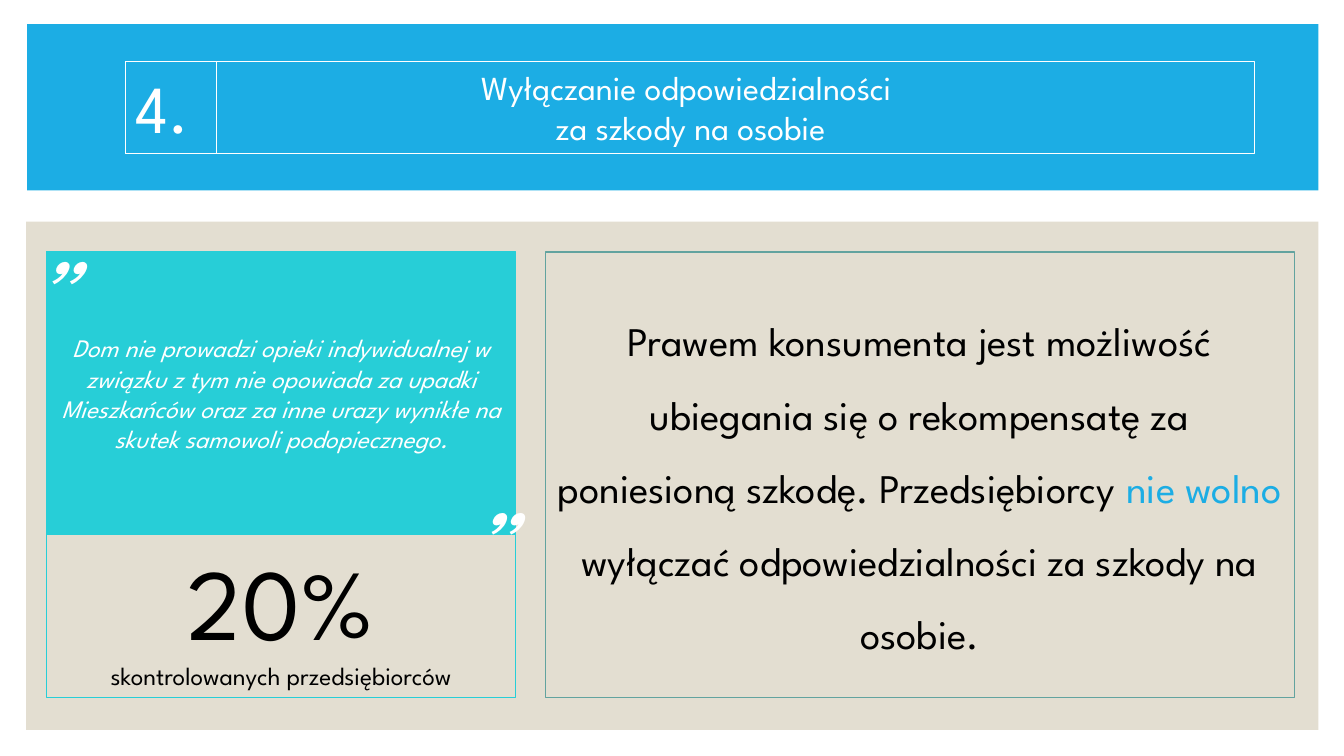
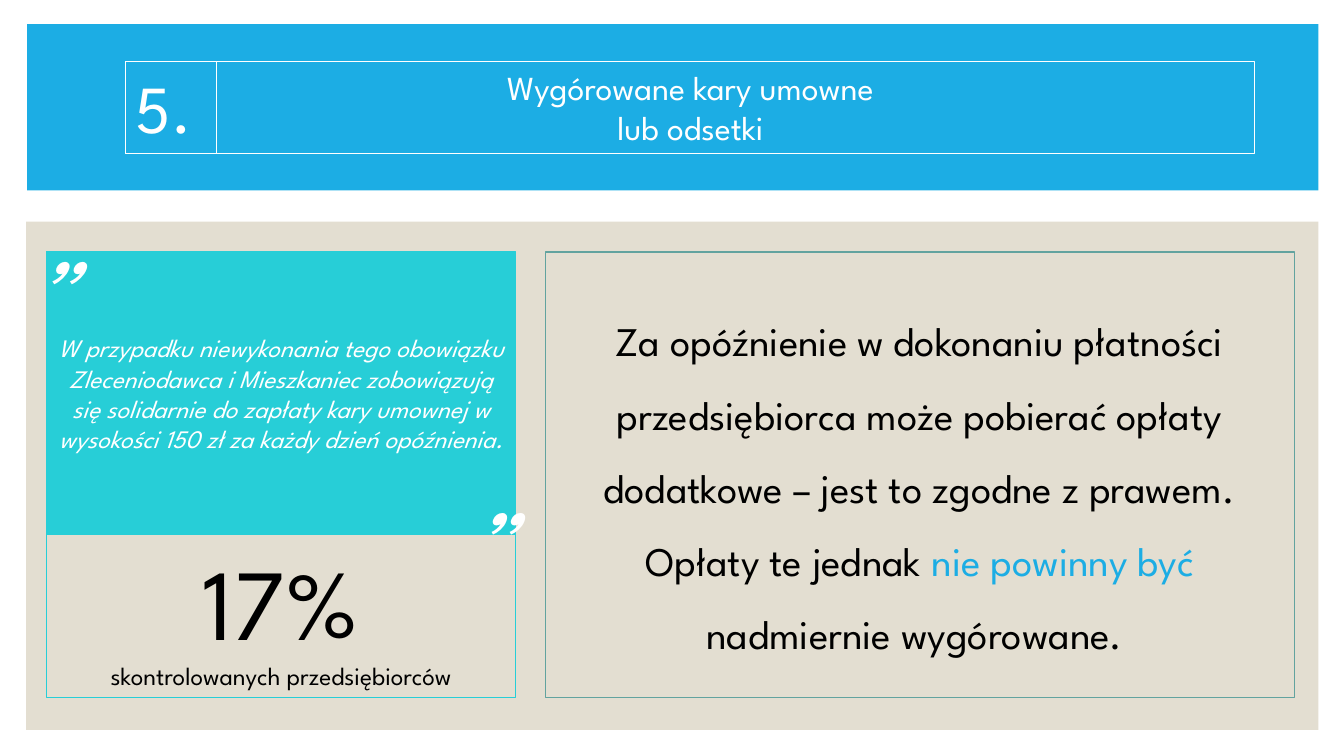
"""Build two slides on unfair contract terms in care homes."""
from pptx import Presentation
from pptx.dml.color import RGBColor
from pptx.enum.shapes import MSO_SHAPE
from pptx.enum.text import MSO_ANCHOR, MSO_AUTO_SIZE, PP_ALIGN
from pptx.util import Pt

FONT = "League Spartan"
COLORS = {
    "white": "FFFFFF",
    "black": "000000",
    "blue": "1CADE4",
    "turquoise": "27CED7",
    "green": "62A39F",
    "beige": "E3DED1",
}
TITLE_TOP, TITLE_HEIGHT = 43.9, 65.5
CARD_LEFT, CARD_TOP, CARD_WIDTH = 33.1, 180, 335.5
QUOTE_HEIGHT, STAT_HEIGHT = 201.6, 116.6

TOPICS = [
    {
        "number": "4.",
        "title": ["Wyłączanie odpowiedzialności ", "za szkody na osobie"],
        "quote": "Dom nie prowadzi opieki indywidualnej w związku z tym nie opowiada "
                 "za upadki Mieszkańców oraz za inne urazy wynikłe na skutek samowoli "
                 "podopiecznego.",
        "share": "20%",
        "rule": [
            ("Prawem konsumenta jest możliwość ubiegania się o rekompensatę za "
             "poniesioną szkodę. Przedsiębiorcy ", "black"),
            ("nie wolno ", "blue"),
            ("wyłączać odpowiedzialności za szkody na osobie.", "black"),
        ],
    },
    {
        "number": "5.",
        "title": ["Wygórowane kary umowne", "lub odsetki"],
        "quote": "W przypadku niewykonania tego obowiązku Zleceniodawca i Mieszkaniec "
                 "zobowiązują się solidarnie do zapłaty kary umownej w wysokości "
                 "150 zł za każdy dzień opóźnienia.",
        "share": "17%",
        "rule": [
            ("Za opóźnienie w dokonaniu płatności przedsiębiorca może pobierać opłaty "
             "dodatkowe – jest to zgodne z prawem. Opłaty te jednak ", "black"),
            ("nie powinny być ", "blue"),
            ("nadmiernie wygórowane. ", "black"),
        ],
    },
]


def rgb(color):
    return RGBColor.from_string(COLORS[color])


def add_panel(slide, box, fill=None, line=None, anchor=MSO_ANCHOR.TOP):
    panel = slide.shapes.add_shape(MSO_SHAPE.RECTANGLE, *map(Pt, box))
    panel.shadow.inherit = False
    if fill:
        panel.fill.solid()
        panel.fill.fore_color.rgb = rgb(fill)
    else:
        panel.fill.background()
    if line:
        panel.line.color.rgb = rgb(line)
        panel.line.width = Pt(0.75)
    else:
        panel.line.fill.background()
    panel.text_frame.word_wrap = True
    panel.text_frame.vertical_anchor = anchor
    return panel.text_frame


def style(paragraph, size, color, align=PP_ALIGN.CENTER, italic=False):
    paragraph.alignment = align
    paragraph.font.name = FONT
    paragraph.font.size = Pt(size)
    paragraph.font.italic = italic
    paragraph.font.color.rgb = rgb(color)


def write(frame, lines, color, align=PP_ALIGN.CENTER, italic=False):
    for index, (text, size) in enumerate(lines):
        paragraph = frame.add_paragraph() if index else frame.paragraphs[0]
        paragraph.add_run().text = text
        style(paragraph, size, color, align, italic)


def add_quote_mark(slide, mark, box, align):
    frame = slide.shapes.add_textbox(*map(Pt, box)).text_frame
    frame.word_wrap = False
    frame.auto_size = MSO_AUTO_SIZE.SHAPE_TO_FIT_TEXT
    write(frame, [(mark, 66)], "white", align, italic=True)


def add_backdrop(slide):
    add_panel(slide, (18.7, 18.7, 923, 502.6), fill="beige")
    add_panel(slide, (13.7, 9.4, 941.8, 149), fill="white")
    add_panel(slide, (19.4, 17.3, 922.3, 118.8), fill="blue")


def add_title(slide, number, title):
    heading = add_panel(slide, (90, TITLE_TOP, 806.4, TITLE_HEIGHT), line="white")
    write(heading, [(text, 24) for text in title], "white")
    counter = add_panel(slide, (90, TITLE_TOP, 64.8, TITLE_HEIGHT), line="white")
    write(counter, [(number, 48)], "white", PP_ALIGN.LEFT)


def add_card(slide, quote, share):
    stat = add_panel(slide, (CARD_LEFT, CARD_TOP + QUOTE_HEIGHT, CARD_WIDTH, STAT_HEIGHT),
                     line="turquoise")
    write(stat, [(share, 72), ("skontrolowanych przedsiębiorców", 18)], "black")
    citation = add_panel(slide, (CARD_LEFT, CARD_TOP, CARD_WIDTH, QUOTE_HEIGHT),
                         "turquoise", "turquoise", MSO_ANCHOR.MIDDLE)
    write(citation, [(quote, 18)], "white", italic=True)
    add_quote_mark(slide, "”", (328.3, 339.8, 46.8, 87.1), PP_ALIGN.CENTER)
    add_quote_mark(slide, "„", (28.8, 126, 48.2, 87.1), PP_ALIGN.LEFT)


def add_rule(slide, parts):
    frame = add_panel(slide, (389.5, CARD_TOP, 535, QUOTE_HEIGHT + STAT_HEIGHT),
                      line="green", anchor=MSO_ANCHOR.MIDDLE)
    paragraph = frame.paragraphs[0]
    style(paragraph, 29, "black")
    paragraph.line_spacing = 1.5
    paragraph.space_after = Pt(6)
    for text, color in parts:
        run = paragraph.add_run()
        run.text = text
        run.font.color.rgb = rgb(color)


def main():
    deck = Presentation()
    deck.slide_width, deck.slide_height = Pt(960), Pt(540)
    for topic in TOPICS:
        slide = deck.slides.add_slide(deck.slide_layouts[6])
        add_backdrop(slide)
        add_title(slide, topic["number"], topic["title"])
        add_card(slide, topic["quote"], topic["share"])
        add_rule(slide, topic["rule"])
    deck.save("out.pptx")


if __name__ == "__main__":
    main()
